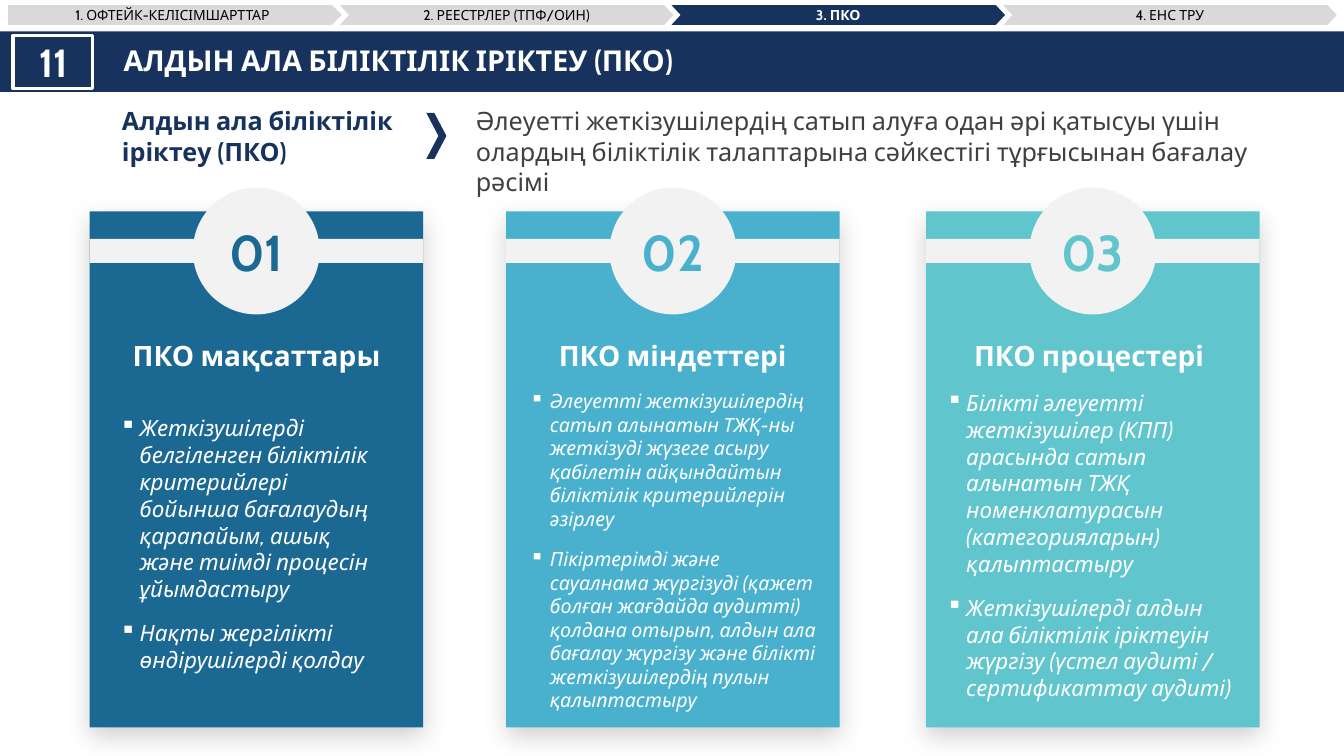
from dataclasses import dataclass
from typing import Any

import lxml.etree
import pptx
import pptx.dml.color
import pptx.enum.shapes
import pptx.enum.text
import pptx.oxml.ns
import pptx.util

Pt = pptx.util.Pt
Preset = pptx.enum.shapes.MSO_SHAPE
Align = pptx.enum.text.PP_ALIGN

FONT = "Cabin"
NAVY = "17335D"
WHITE = "FFFFFF"
BLACK = "000000"
SILVER = "D9D9D9"
PALE = "F2F2F2"
CHARCOAL = "404040"


@dataclass(frozen=True)
class Area:
    left: float
    top: float
    width: float
    height: float

    def lengths(self) -> list[Any]:
        return [Pt(value) for value in (self.left, self.top, self.width, self.height)]


@dataclass(frozen=True)
class Style:
    size: float
    color: str
    bold: bool = False
    italic: bool = False


@dataclass(frozen=True)
class Step:
    label: str
    active: bool = False


@dataclass(frozen=True)
class Card:
    number: str
    title: str
    color: str
    left: float
    title_left: float
    body: Area
    body_size: float
    items: tuple[str, ...]


STEPS = (
    Step("1. ОФТЕЙК-КЕЛІСІМШАРТТАР"),
    Step("2. РЕЕСТРЛЕР (ТПФ/ОИН)"),
    Step("3. ПКО", True),
    Step("4. ЕНС ТРУ"),
)

CARDS = (
    Card("01", "ПКО мақсаттары", "1B6893", 64, 78.5, Area(78.5, 292.3, 203, 193.7), 16, (
        "Жеткізушілерді белгіленген біліктілік критерийлері бойынша бағалаудың "
        "қарапайым, ашық және тиімді процесін ұйымдастыру",
        "Нақты жергілікті өндірушілерді қолдау",
    )),
    Card("02", "ПКО міндеттері", "49B1CE", 361.6, 375.8, Area(371.5, 274.3, 221, 239.8), 14, (
        "Әлеуетті жеткізушілердің сатып алынатын ТЖҚ-ны жеткізуді жүзеге асыру "
        "қабілетін айқындайтын біліктілік критерийлерін әзірлеу",
        "Пікіртерімді және сауалнама жүргізуді (қажет болған жағдайда аудитті) "
        "қолдана отырып, алдын ала бағалау жүргізу және білікті жеткізушілердің "
        "пулын қалыптастыру",
    )),
    Card("03", "ПКО процестері", "60C5CC", 661.5, 673.2, Area(668.9, 274.3, 221, 232.6), 16, (
        "Білікті әлеуетті жеткізушілер (КПП) арасында сатып алынатын ТЖҚ "
        "номенклатурасын (категорияларын) қалыптастыру",
        "Жеткізушілерді алдын ала біліктілік іріктеуін жүргізу (үстел аудиті / "
        "сертификаттау аудиті)",
    )),
)


def rgb(color: str) -> pptx.dml.color.RGBColor:
    return pptx.dml.color.RGBColor.from_string(color)


def add_span(para: Any, text: str, style: Style) -> None:
    span = para.add_run()
    span.text = text
    span.font.name = FONT
    span.font.size = Pt(style.size)
    span.font.bold = style.bold
    span.font.italic = style.italic
    span.font.color.rgb = rgb(style.color)


def draw_shape(shapes: Any, preset: Any, area: Area, fill: str | None = None) -> Any:
    shape = shapes.add_shape(preset, *area.lengths())
    shape.shadow.inherit = False
    if fill:
        shape.fill.solid()
        shape.fill.fore_color.rgb = rgb(fill)
    else:
        shape.fill.background()
    shape.line.fill.background()
    return shape


def label_shape(shape: Any, text: str, style: Style) -> None:
    frame = shape.text_frame
    frame.margin_left = frame.margin_right = Pt(7.2)
    frame.margin_top = frame.margin_bottom = Pt(7.2)
    frame.vertical_anchor = pptx.enum.text.MSO_ANCHOR.MIDDLE
    para = frame.paragraphs[0]
    para.alignment = Align.CENTER
    add_span(para, text, style)


def draw_text(shapes: Any, area: Area, texts: tuple[str, ...], style: Style,
              align: Any = Align.LEFT, wrap: bool = True, bullet: bool = False) -> None:
    box = shapes.add_textbox(*area.lengths())
    frame = box.text_frame
    frame.word_wrap = wrap
    frame.auto_size = pptx.enum.text.MSO_AUTO_SIZE.SHAPE_TO_FIT_TEXT
    for index, text in enumerate(texts):
        para = frame.add_paragraph() if index else frame.paragraphs[0]
        if bullet:
            add_bullet(para)
        para.alignment = align
        add_span(para, text, style)


def add_bullet(para: Any) -> None:
    properties = para._p.get_or_add_pPr()
    properties.set("marL", str(Pt(14.2)))
    properties.set("indent", str(-Pt(14.2)))
    mark = lxml.etree.SubElement(properties, pptx.oxml.ns.qn("a:buChar"))
    mark.set("char", "▪")
    para.space_after = Pt(12)


def add_soft_shadow(shape: Any) -> None:
    qn = pptx.oxml.ns.qn
    effects = shape._element.spPr.find(qn("a:effectLst"))
    shadow = lxml.etree.SubElement(effects, qn("a:outerShdw"), {
        "blurRad": str(Pt(18)), "dist": str(Pt(6)), "dir": "5400000", "rotWithShape": "0"})
    color = lxml.etree.SubElement(shadow, qn("a:srgbClr"), {"val": BLACK})
    lxml.etree.SubElement(color, qn("a:alpha"), {"val": "18000"})


def draw_header(shapes: Any) -> None:
    draw_shape(shapes, Preset.RECTANGLE, Area(0, 22.5, 960, 43.2), NAVY)
    frame = draw_shape(shapes, Preset.RECTANGLE, Area(9.3, 25.3, 57, 38))
    frame.line.color.rgb = rgb(WHITE)
    frame.line.width = Pt(2.25)
    draw_text(shapes, Area(7, 24, 62, 41), ("11",), Style(28, WHITE, True), Align.CENTER, False)
    draw_text(shapes, Area(81.2, 27.3, 869, 32.4), ("АЛДЫН АЛА БІЛІКТІЛІК ІРІКТЕУ (ПКО)",),
              Style(20.5, WHITE, True))


def draw_steps(shapes: Any) -> None:
    for index, step in enumerate(STEPS):
        area = Area(5.8 + 236.9 * index, 3.6, 238.3, 14.2)
        preset = Preset.CHEVRON if index else Preset.PENTAGON
        shape = draw_shape(shapes, preset, area, NAVY if step.active else SILVER)
        shape.adjustments[0] = 0.467 if index else 0.5
        label_shape(shape, step.label, Style(10, WHITE if step.active else BLACK, step.active))


def draw_definition(shapes: Any) -> None:
    draw_text(shapes, Area(80, 72, 247, 51), ("Алдын ала біліктілік іріктеу (ПКО)",),
              Style(18, NAVY, True))
    draw_text(shapes, Area(332.8, 72, 597.6, 51),
              ("Әлеуетті жеткізушілердің сатып алуға одан әрі қатысуы үшін олардың "
               "біліктілік талаптарына сәйкестігі тұрғысынан бағалау рәсімі",),
              Style(18, CHARCOAL))
    arrow = draw_shape(shapes, Preset.CHEVRON, Area(304.5, 80.6, 14.4, 33), NAVY)
    arrow.adjustments[0] = 0.603


def draw_card(shapes: Any, card: Card) -> None:
    group = shapes.add_group_shape().shapes
    panel = draw_shape(group, Preset.RECTANGLE, Area(card.left, 151, 238.2, 368.6), card.color)
    add_soft_shadow(panel)
    draw_shape(group, Preset.RECTANGLE, Area(card.left, 170.6, 238.2, 17.2), PALE)
    badge = draw_shape(group, Preset.OVAL, Area(card.left + 73.8, 134, 90.6, 90.6), PALE)
    label_shape(badge, card.number, Style(36, card.color, True))
    draw_text(shapes, Area(card.title_left, 238.3, 209.5, 31.5), (card.title,),
              Style(20, WHITE, True), Align.CENTER)
    draw_text(shapes, card.body, card.items, Style(card.body_size, WHITE, italic=True), bullet=True)


def main() -> None:
    deck = pptx.Presentation()
    deck.slide_width = Pt(960)
    deck.slide_height = Pt(540)
    page = deck.slides.add_slide(deck.slide_layouts[6])
    draw_header(page.shapes)
    draw_steps(page.shapes)
    for card in CARDS:
        draw_card(page.shapes, card)
    draw_definition(page.shapes)
    deck.save("out.pptx")


if __name__ == "__main__":
    main()
